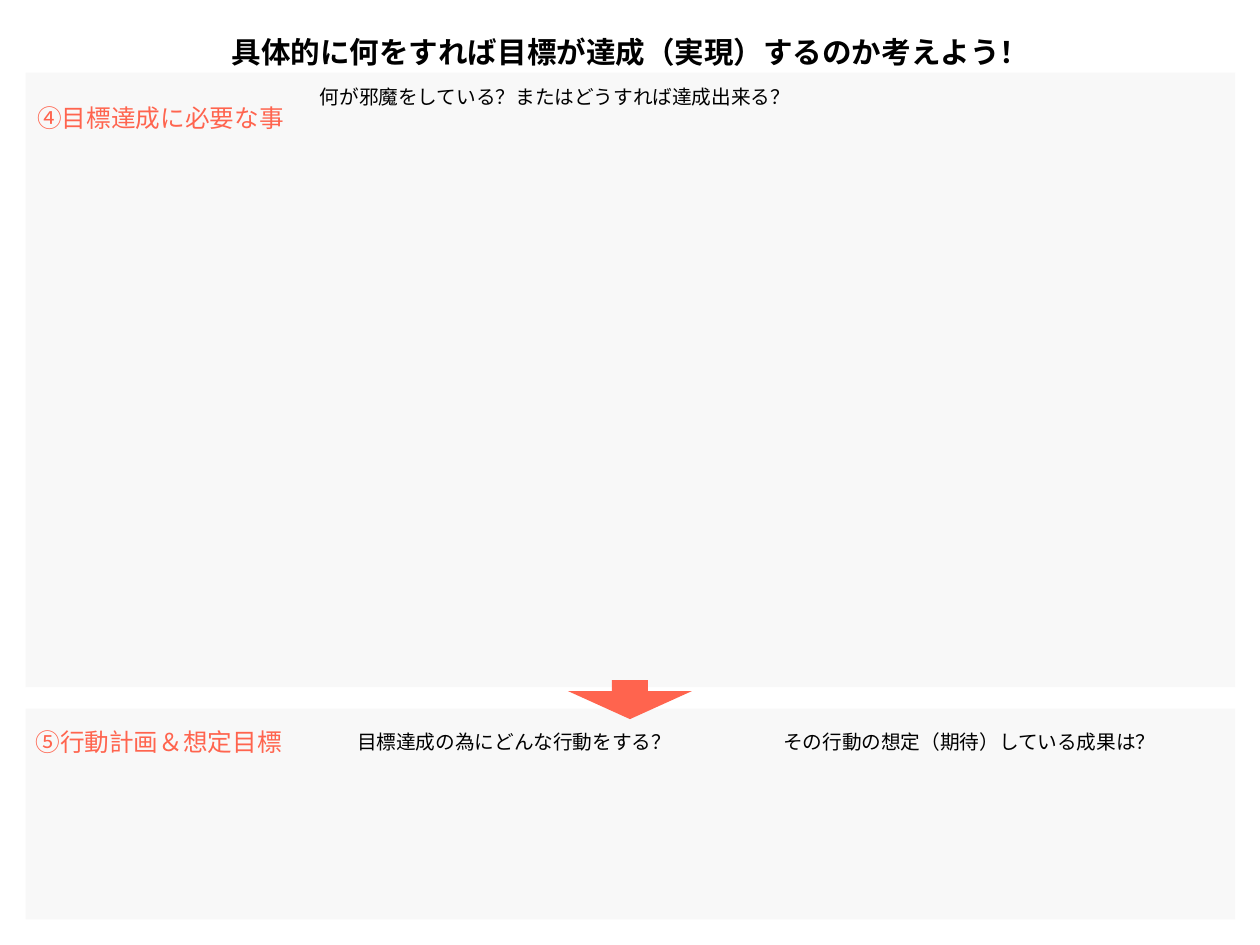
import pptx
import pptx.dml.color
import pptx.enum.shapes
import pptx.enum.text
import pptx.oxml
import pptx.oxml.ns
import pptx.util
from pptx.util import Inches

FONT = "Noto Sans CJK JP"
ACCENT = "FF644E"
BLACK = "000000"
PANEL_LEFT, PANEL_WIDTH = 0.29, 13.65


def paint(color_format, hex_color):
    color_format.rgb = pptx.dml.color.RGBColor.from_string(hex_color)


def write(holder, wording, size, color, bold=False, align="LEFT"):
    frame = holder.text_frame
    frame_format = {
        "word_wrap": False,
        "auto_size": pptx.enum.text.MSO_AUTO_SIZE.NONE,
        "vertical_anchor": pptx.enum.text.MSO_ANCHOR.MIDDLE,
    }
    for side in ("left", "top", "right", "bottom"):
        frame_format["margin_" + side] = Inches(0.06)
    for name, value in frame_format.items():
        setattr(frame, name, value)
    paragraph = frame.paragraphs[0]
    paragraph.alignment = getattr(pptx.enum.text.PP_ALIGN, align)
    run = paragraph.add_run()
    run.text = wording
    font_format = {"name": FONT, "size": pptx.util.Pt(size), "bold": bold}
    for name, value in font_format.items():
        setattr(run.font, name, value)
    paint(run.font.color, color)
    # Japanese glyphs take the East Asian typeface
    east_asian = pptx.oxml.parse_xml(
        f'<a:ea {pptx.oxml.ns.nsdecls("a")} typeface="{FONT}"/>')
    run.font._element.find(pptx.oxml.ns.qn("a:latin")).addnext(east_asian)


deck = pptx.Presentation()
deck.slide_width = Inches(14.22)
deck.slide_height = Inches(10.67)
slide = deck.slides.add_slide(deck.slide_layouts[5])

# Title
title = slide.shapes.title
title_place = {"left": 2.55, "top": 0.28, "width": 9.13, "height": 0.61}
for name, value in title_place.items():
    setattr(title, name, Inches(value))
write(title, "具体的に何をすれば目標が達成（実現）するのか考えよう！", 24, BLACK,
      bold=True, align="CENTER")

# Pale panels for the answers
for top, height in [(0.82, 6.94), (8, 2.38)]:
    panel = slide.shapes.add_shape(
        pptx.enum.shapes.MSO_SHAPE.RECTANGLE, Inches(PANEL_LEFT), Inches(top),
        Inches(PANEL_WIDTH), Inches(height))
    panel.shadow.inherit = False
    panel.line.fill.background()
    panel.fill.solid()
    paint(panel.fill.fore_color, "D6D5D5")
    panel_color = panel._element.spPr.find(".//" + pptx.oxml.ns.qn("a:srgbClr"))
    panel_color.append(pptx.oxml.parse_xml(
        f'<a:alpha {pptx.oxml.ns.nsdecls("a")} val="16000"/>'))

# Arrow from the needs to the action plan
arrow = slide.shapes.add_shape(
    pptx.enum.shapes.MSO_SHAPE.DOWN_ARROW,
    Inches(6.41), Inches(7.68), Inches(1.4), Inches(0.44))
arrow.adjustments[0] = 0.29
arrow.adjustments[1] = 0.72
arrow.shadow.inherit = False
arrow.line.fill.background()
arrow.fill.solid()
paint(arrow.fill.fore_color, ACCENT)

# Section headings and their questions
labels = [
    ("④目標達成に必要な事", 0.36, 1.13, 2.9, 0.39, 20, ACCENT),
    ("何が邪魔をしている？またはどうすれば達成出来る？", 3.55, 0.87, 5.46, 0.44, 16, BLACK),
    ("⑤行動計画＆想定目標", 0.34, 8.18, 2.9, 0.39, 20, ACCENT),
    ("目標達成の為にどんな行動をする？", 3.97, 8.15, 3.68, 0.44, 16, BLACK),
    ("その行動の想定（期待）している成果は？", 8.78, 8.15, 4.35, 0.44, 16, BLACK),
]
for wording, left, top, width, height, size, color in labels:
    label = slide.shapes.add_textbox(
        Inches(left), Inches(top), Inches(width), Inches(height))
    write(label, wording, size, color)

deck.save("out.pptx")
